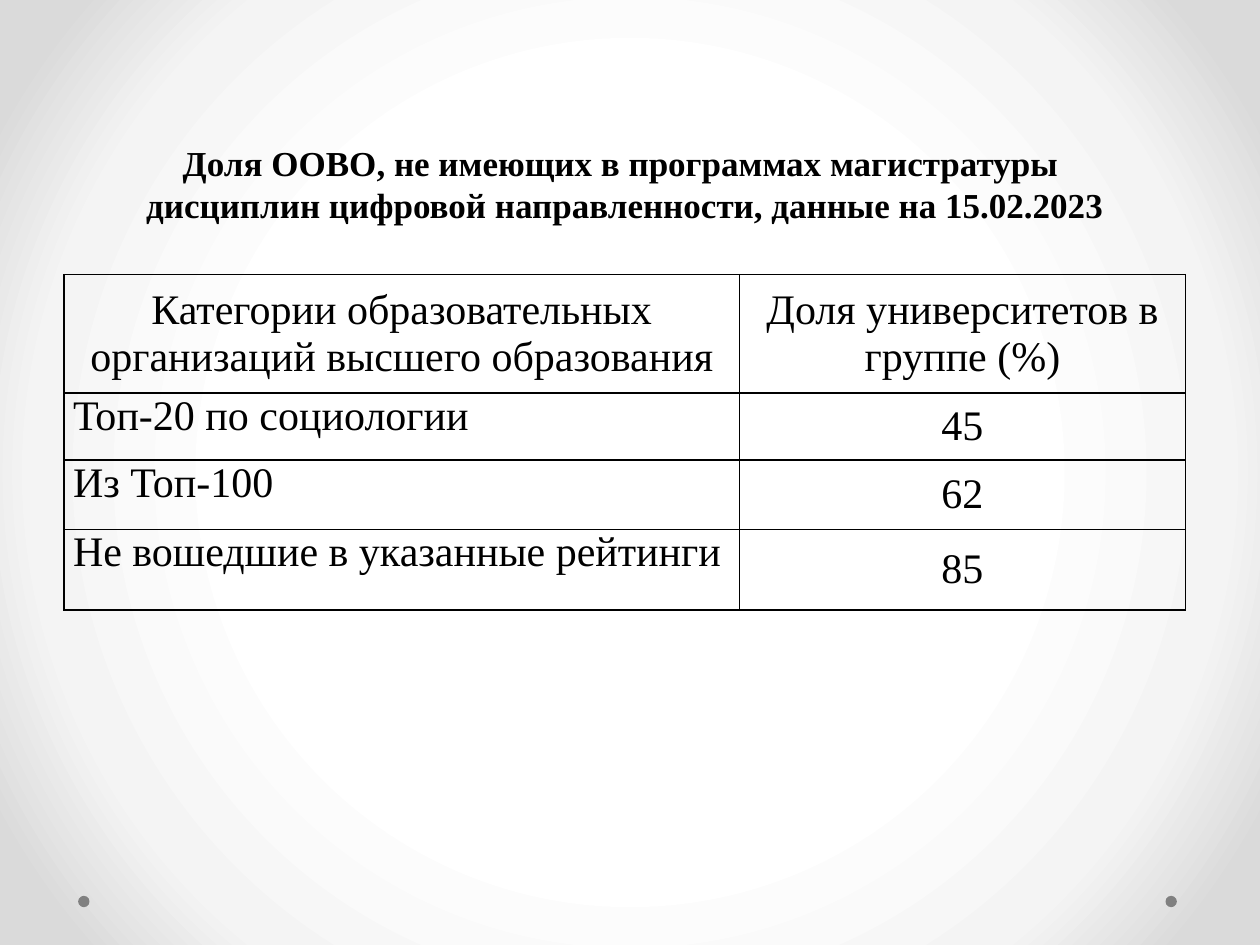
from dataclasses import dataclass

import pptx
import pptx.dml.color
import pptx.enum.shapes
import pptx.enum.text
import pptx.oxml
import pptx.oxml.ns
import pptx.util
from lxml import etree

Inches = pptx.util.Inches
Pt = pptx.util.Pt
RGB = pptx.dml.color.RGBColor.from_string
ALIGN = pptx.enum.text.PP_ALIGN
ANCHOR = pptx.enum.text.MSO_ANCHOR
qn = pptx.oxml.ns.qn


@dataclass(frozen=True)
class Theme:
    font: str = "Times New Roman"
    ink: str = "000000"
    dot: str = "808080"
    glow: tuple = ((50, "FFFFFF"), (76, "F4F4F4"), (92, "DADADA"))
    title_size: int = 20
    table_size: int = 24
    border: int = 1


THEME = Theme()
SLIDE_W, SLIDE_H = 10, 7.5
MARGIN, CONTENT_W = 0.51, 8.9
TITLE_BOX = (MARGIN, 1.07, CONTENT_W, 0.77)
TABLE_BOX = (MARGIN, 2.18, CONTENT_W, 2.66)
DOTS_BOX = (0.62, 7.11, 8.72, 0.09)

TITLE = ("Доля ООВО, не имеющих в программах магистратуры \n"
         "дисциплин цифровой направленности, данные на 15.02.2023")
COLUMN_SHARES = (0.602, 0.398)
ROW_SHARES = (0.353, 0.2, 0.207, 0.24)
SHARES_BY_CATEGORY = (
    ("Категории образовательных организаций высшего образования",
     "Доля университетов в группе (%)"),
    ("Топ-20 по социологии", "45"),
    ("Из Топ-100", "62"),
    ("Не вошедшие в указанные рейтинги", "85"),
)


def style_text(frame, size, align, bold=False):
    for paragraph in frame.paragraphs:
        paragraph.alignment = align
        for run in paragraph.runs:
            run.font.name = THEME.font
            run.font.size = Pt(size)
            run.font.bold = bold
            run.font.color.rgb = RGB(THEME.ink)


def paint_background(slide):
    """Radial gradient, light in the centre and grey at the corners."""
    slide.background.fill.gradient()
    gradient = slide.element.find(".//" + qn("a:gradFill"))
    for child in list(gradient):
        gradient.remove(child)
    stops = etree.SubElement(gradient, qn("a:gsLst"))
    for position, color in THEME.glow:
        stop = etree.SubElement(stops, qn("a:gs"), pos=str(position * 1000))
        etree.SubElement(stop, qn("a:srgbClr"), val=color)
    circle = etree.SubElement(gradient, qn("a:path"), path="circle")
    etree.SubElement(circle, qn("a:fillToRect"),
                     {side: "50000" for side in "ltrb"})


def add_corner_dots(slide, box):
    left, top, width, size = box
    for x in (left + width - size, left):
        dot = slide.shapes.add_shape(
            pptx.enum.shapes.MSO_SHAPE.OVAL,
            Inches(x), Inches(top), Inches(size), Inches(size))
        dot.shadow.inherit = False
        dot.fill.solid()
        dot.fill.fore_color.rgb = RGB(THEME.dot)
        dot.line.fill.background()


def place_title(slide, box):
    title = slide.shapes.title
    title.left, title.top, title.width, title.height = map(Inches, box)
    frame = title.text_frame
    frame.text = TITLE
    frame.word_wrap = True
    frame.auto_size = pptx.enum.text.MSO_AUTO_SIZE.SHAPE_TO_FIT_TEXT
    frame.vertical_anchor = ANCHOR.TOP
    for paragraph in frame.paragraphs:
        paragraph.space_before = Pt(0)
    style_text(frame, THEME.title_size, ALIGN.CENTER, bold=True)


def draw_borders(cell):
    properties = cell._tc.get_or_add_tcPr()
    for index, side in enumerate(("a:lnL", "a:lnR", "a:lnT", "a:lnB")):
        line = etree.Element(qn(side), w=str(Pt(THEME.border)))
        fill = etree.SubElement(line, qn("a:solidFill"))
        etree.SubElement(fill, qn("a:srgbClr"), val=THEME.ink)
        properties.insert(index, line)


def add_share_table(slide, box):
    left, top, width, height = box
    table = slide.shapes.add_table(
        len(ROW_SHARES), len(COLUMN_SHARES), *map(Inches, box)).table
    table.first_row = table.horz_banding = False
    for column, share in zip(table.columns, COLUMN_SHARES):
        column.width = Inches(width * share)
    for row, share in zip(table.rows, ROW_SHARES):
        row.height = Inches(height * share)

    for r, texts in enumerate(SHARES_BY_CATEGORY):
        for c, text in enumerate(texts):
            cell = table.cell(r, c)
            is_category = r > 0 and c == 0
            cell.text_frame.text = text
            cell.margin_left = cell.margin_right = Inches(0.07)
            cell.margin_top = cell.margin_bottom = 0
            cell.vertical_anchor = ANCHOR.TOP if is_category else ANCHOR.MIDDLE
            style_text(cell.text_frame, THEME.table_size,
                       ALIGN.LEFT if is_category else ALIGN.CENTER)
            cell.fill.background()
            draw_borders(cell)


def main():
    deck = pptx.Presentation()
    deck.slide_width, deck.slide_height = Inches(SLIDE_W), Inches(SLIDE_H)
    slide = deck.slides.add_slide(deck.slide_layouts.get_by_name("Title Only"))
    paint_background(slide)
    add_corner_dots(slide, DOTS_BOX)
    place_title(slide, TITLE_BOX)
    add_share_table(slide, TABLE_BOX)
    deck.save("out.pptx")


if __name__ == "__main__":
    main()
